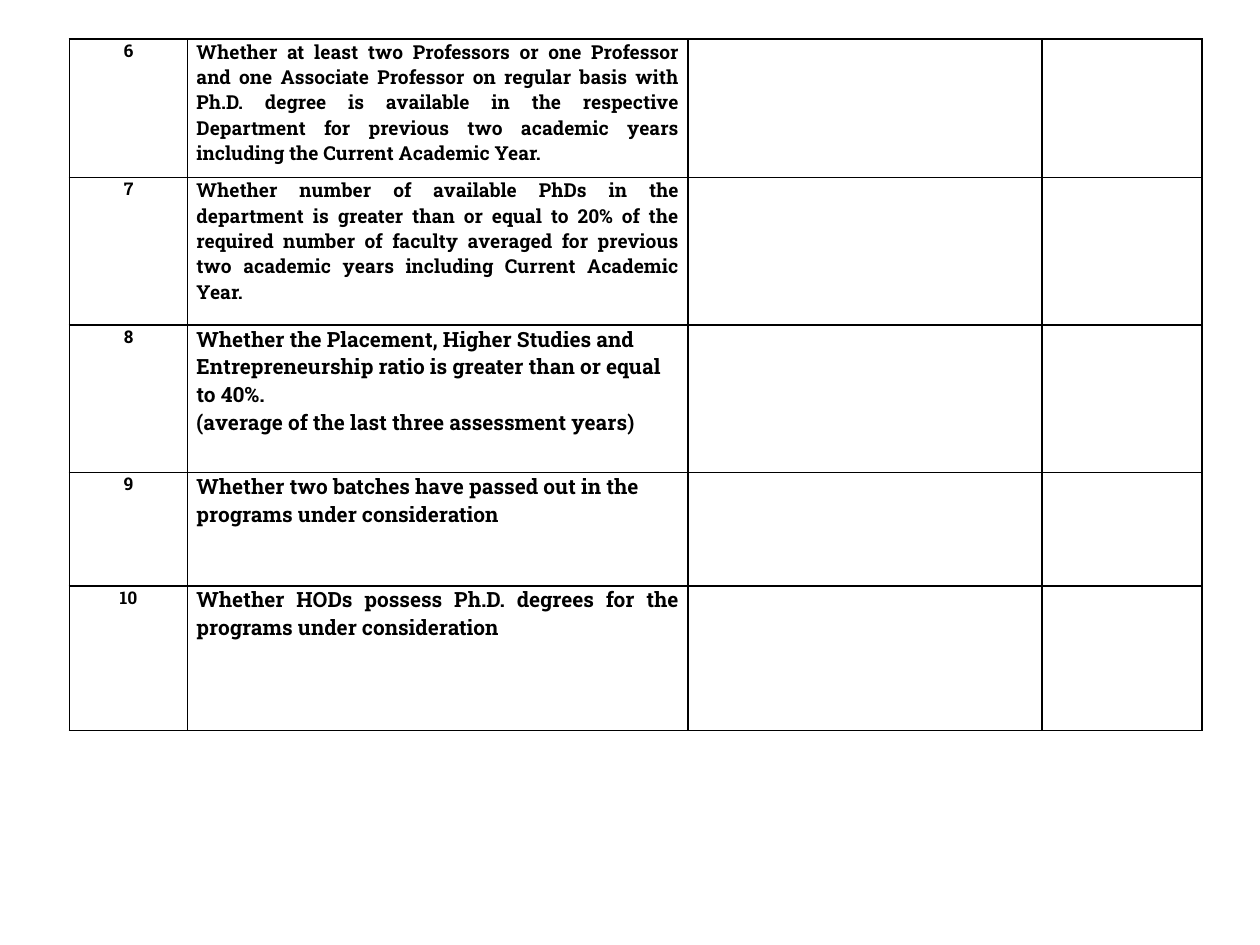
from lxml import etree
from pptx import Presentation
from pptx.dml.color import RGBColor
from pptx.enum.text import PP_ALIGN
from pptx.oxml.ns import qn
from pptx.util import Inches, Pt

LEFT, CENTER, JUSTIFY = PP_ALIGN.LEFT, PP_ALIGN.CENTER, PP_ALIGN.JUSTIFY
COLORS = {"ink": "000000"}
FONT = "Roboto Slab"
BLANK_LAYOUT = 6
COLUMN_WIDTHS = [0.94, 3.97, 2.81, 1.27]
FIRST_NUMBER = 6

CRITERIA = [
    (1.1, 11, JUSTIFY, [
        "Whether at least two Professors or one Professor and one Associate "
        "Professor on regular basis with Ph.D. degree is available in the "
        "respective Department for previous two academic years including the "
        "Current Academic Year."]),
    (1.17, 11, JUSTIFY, [
        "Whether number of available PhDs in the department is greater than or "
        "equal to 20% of the required number of faculty averaged for previous "
        "two academic years including Current Academic Year."]),
    (1.17, 12, LEFT, [
        "Whether the Placement, Higher Studies and Entrepreneurship ratio is "
        "greater than or equal to 40%.",
        "(average of the last three assessment years)"]),
    (0.9, 12, LEFT, [
        "Whether two batches have passed out in the programs under consideration"]),
    (1.15, 12, JUSTIFY, [
        "Whether HODs possess Ph.D. degrees for the programs under consideration"]),
]


def add_borders(cell, color, width=1):
    properties = cell._tc.get_or_add_tcPr()
    for position, side in enumerate(("lnL", "lnR", "lnT", "lnB")):
        line = etree.Element(qn(f"a:{side}"), w=str(Pt(width)))
        fill = etree.SubElement(line, qn("a:solidFill"))
        etree.SubElement(fill, qn("a:srgbClr"), val=color)
        properties.insert(position, line)


def format_cell(cell):
    cell.fill.background()
    cell.margin_left = cell.margin_right = Inches(0.07)
    cell.margin_top = cell.margin_bottom = 0
    add_borders(cell, COLORS["ink"])


def write_cell(cell, lines, size, align):
    frame = cell.text_frame
    for index, line in enumerate(lines):
        para = frame.add_paragraph() if index else frame.paragraphs[0]
        para.alignment = align
        span = para.add_run()
        span.text = line
        span.font.name = FONT
        span.font.size = Pt(size)
        span.font.bold = True
        span.font.color.rgb = RGBColor.from_string(COLORS["ink"])


def add_criteria_table(page, left, top):
    heights = [criterion[0] for criterion in CRITERIA]
    frame = page.shapes.add_table(
        len(CRITERIA), len(COLUMN_WIDTHS), Inches(left), Inches(top),
        Inches(sum(COLUMN_WIDTHS)), Inches(sum(heights)))
    table = frame.table
    table.first_row = table.horz_banding = False
    for column, width in zip(table.columns, COLUMN_WIDTHS):
        column.width = Inches(width)
    for cell in table.iter_cells():
        format_cell(cell)
    for index, (height, size, align, lines) in enumerate(CRITERIA):
        table.rows[index].height = Inches(height)
        write_cell(table.cell(index, 0), [str(FIRST_NUMBER + index)], 10, CENTER)
        write_cell(table.cell(index, 1), lines, size, align)


def main():
    deck = Presentation()
    deck.slide_width, deck.slide_height = Inches(10), Inches(7.5)
    page = deck.slides.add_slide(deck.slide_layouts[BLANK_LAYOUT])
    add_criteria_table(page, 0.55, 0.31)
    deck.save("out.pptx")


if __name__ == "__main__":
    main()
